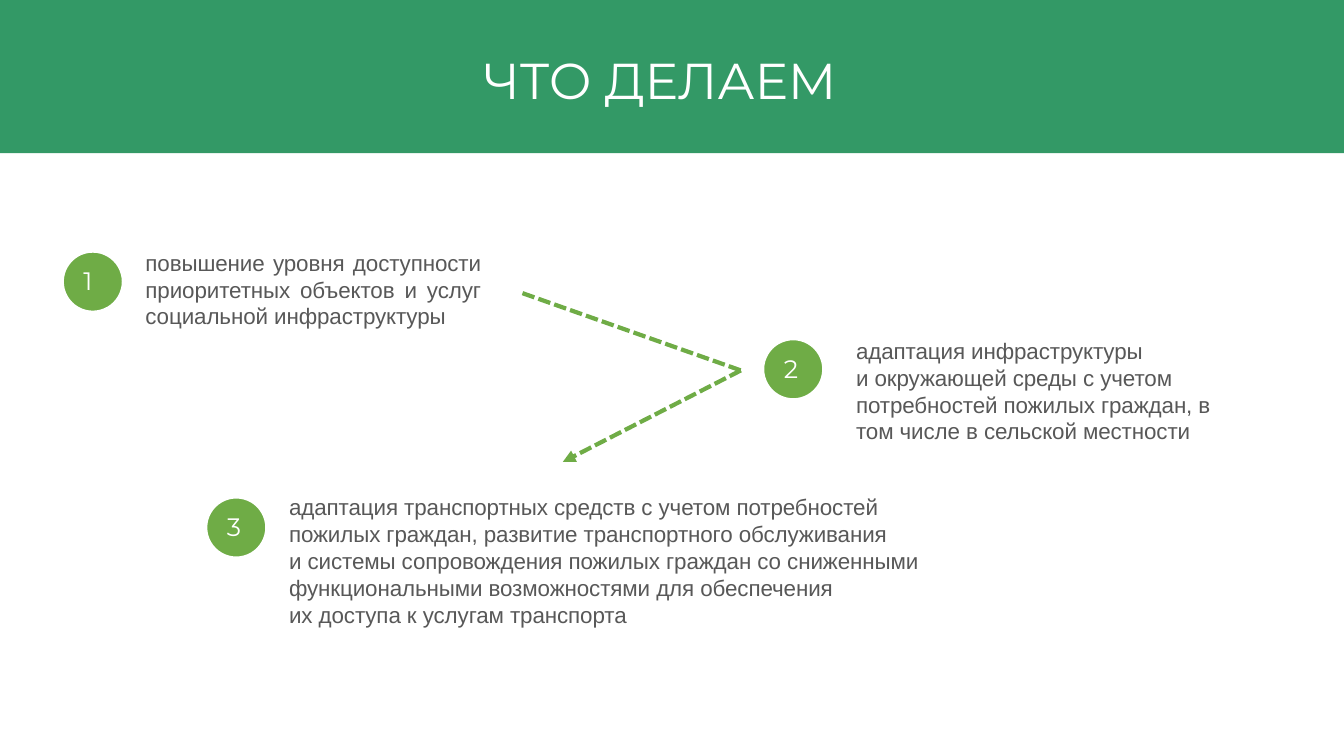
from dataclasses import dataclass

from lxml import etree
from pptx import Presentation
from pptx.dml.color import RGBColor as RGB
from pptx.enum.dml import MSO_LINE
from pptx.enum.shapes import MSO_CONNECTOR as CONN, MSO_SHAPE as SHAPE
from pptx.enum.text import MSO_ANCHOR as ANCHOR, MSO_AUTO_SIZE as AUTO, PP_ALIGN as ALIGN
from pptx.oxml.ns import qn
from pptx.util import Inches, Pt

COLS, ROWS = 160, 90  # square grid cells


@dataclass(frozen=True)
class Theme:
    banner: RGB = RGB.from_string("339966")
    accent: RGB = RGB.from_string("6FAC46")
    white: RGB = RGB.from_string("FFFFFF")
    text: RGB = RGB.from_string("585858")
    head_font: str = "Montserrat"
    body_font: str = "Arial"
    title_size: float = 36
    number_size: float = 18
    body_size: float = 16
    body_leading: float = 19.2
    badge: float = 7.66
    badge_rim: float = 4.56
    arrow_width: float = 3


def write(tf, text, *, font, size, color, align=ALIGN.LEFT, before=1,
          leading=None, tracking=0):
    """Fill a text frame, one paragraph for each line of text."""
    tf.word_wrap = True
    tf.auto_size = AUTO.NONE
    tf.vertical_anchor = ANCHOR.TOP
    for i, line in enumerate(text.split("\n")):
        p = tf.add_paragraph() if i else tf.paragraphs[0]
        p.alignment = align
        p.space_before = Pt(0 if i else before)
        if leading:
            p.line_spacing = Pt(leading)
        r = p.add_run()
        r.text = line
        r.font.name, r.font.size = font, Pt(size)
        r.font.color.rgb = color
        if tracking:
            r.font._element.set("spc", str(tracking))


class Deck:
    def __init__(self, theme):
        self.theme = theme
        self.prs = Presentation()
        self.prs.slide_width, self.prs.slide_height = Inches(13.333), Inches(7.5)
        self.s = self.prs.slides.add_slide(self.prs.slide_layouts[5])

    def x(self, cols):
        return round(self.prs.slide_width * cols / COLS)

    def y(self, rows):
        return round(self.prs.slide_height * rows / ROWS)

    def box(self, x, y, w, h):
        return self.x(x), self.y(y), self.x(w), self.y(h)

    def insets(self, tf, left=0, top=0):
        tf.margin_left, tf.margin_top = self.x(left), self.y(top)
        tf.margin_right = tf.margin_bottom = 0

    def shape(self, kind, x, y, w, h, fill):
        sp = self.s.shapes.add_shape(kind, *self.box(x, y, w, h))
        sp.shadow.inherit = False
        sp.fill.solid()
        sp.fill.fore_color.rgb = fill
        sp.line.fill.background()
        return sp

    def title(self, text, x, y, w, h, left, top):
        t, sp = self.theme, self.s.shapes.title
        sp.left, sp.top, sp.width, sp.height = self.box(x, y, w, h)
        self.insets(sp.text_frame, left, top)
        write(sp.text_frame, text, font=t.head_font, size=t.title_size,
              color=t.white, tracking=-5)

    def banner(self, height):
        sp = self.shape(SHAPE.RECTANGLE, 0, 0, COLS, height, self.theme.banner)
        self.s.shapes.title.element.addprevious(sp.element)  # behind the title

    def badge(self, number, x, y):
        t = self.theme
        sp = self.shape(SHAPE.OVAL, x, y, t.badge, t.badge, t.accent)
        sp.line.color.rgb, sp.line.width = t.white, Pt(t.badge_rim)
        self.insets(sp.text_frame, 1.6, 0.8)
        write(sp.text_frame, str(number), font=t.head_font,
              size=t.number_size, color=t.white)

    def body(self, text, x, y, w, h, align):
        t = self.theme
        tf = self.s.shapes.add_textbox(*self.box(x, y, w, h)).text_frame
        self.insets(tf, 0.12, 0.12)
        write(tf, text, font=t.body_font, size=t.body_size, color=t.text,
              align=align, before=0.9, leading=t.body_leading, tracking=-5)

    def dashed_line(self, start, end, arrow=False):
        c = self.s.shapes.add_connector(
            CONN.STRAIGHT, self.x(start[0]), self.y(start[1]),
            self.x(end[0]), self.y(end[1]))
        c.line.color.rgb = self.theme.accent
        c.line.width = Pt(self.theme.arrow_width)
        c.line.dash_style = MSO_LINE.SQUARE_DOT
        ln = c.line._get_or_add_ln()
        ln.find(qn("a:prstDash")).set("val", "sysDash")
        if arrow:
            etree.SubElement(ln, qn("a:tailEnd"), type="triangle")
        etree.SubElement(c.element.spPr, qn("a:effectLst"))


# Each step: badge position, text box, alignment, text
STEPS = [
    ((7.22, 29.7), (17.2, 29.5, 40.1, 10), ALIGN.JUSTIFY,
     "повышение уровня доступности приоритетных объектов и услуг "
     "социальной инфраструктуры"),
    ((90.6, 40.13), (101.8, 40, 42.7, 13.1), ALIGN.LEFT,
     "адаптация инфраструктуры\n"
     "и окружающей среды с учетом\n"
     "потребностей пожилых граждан, в том числе в сельской местности"),
    ((24.3, 58.97), (34.3, 58.6, 76, 16.3), ALIGN.LEFT,
     "адаптация транспортных средств с учетом потребностей\n"
     "пожилых граждан, развитие транспортного обслуживания\n"
     "и системы сопровождения пожилых граждан со сниженными "
     "функциональными возможностями для обеспечения\n"
     "их доступа к услугам транспорта"),
]


def main():
    deck = Deck(Theme())

    # Header
    deck.title("ЧТО ДЕЛАЕМ", 11.9, 2.64, 136.2, 17.6, left=45.6, top=3.24)
    deck.banner(18.24)

    # Path from step to step
    bend = (88.2, 44.1)
    deck.dashed_line((62.2, 34.9), bend)
    deck.dashed_line(bend, (67, 55), arrow=True)

    # Numbered steps
    for number, (spot, area, align, text) in enumerate(STEPS, 1):
        deck.badge(number, *spot)
        deck.body(text, *area, align)

    deck.prs.save("out.pptx")


if __name__ == "__main__":
    main()
